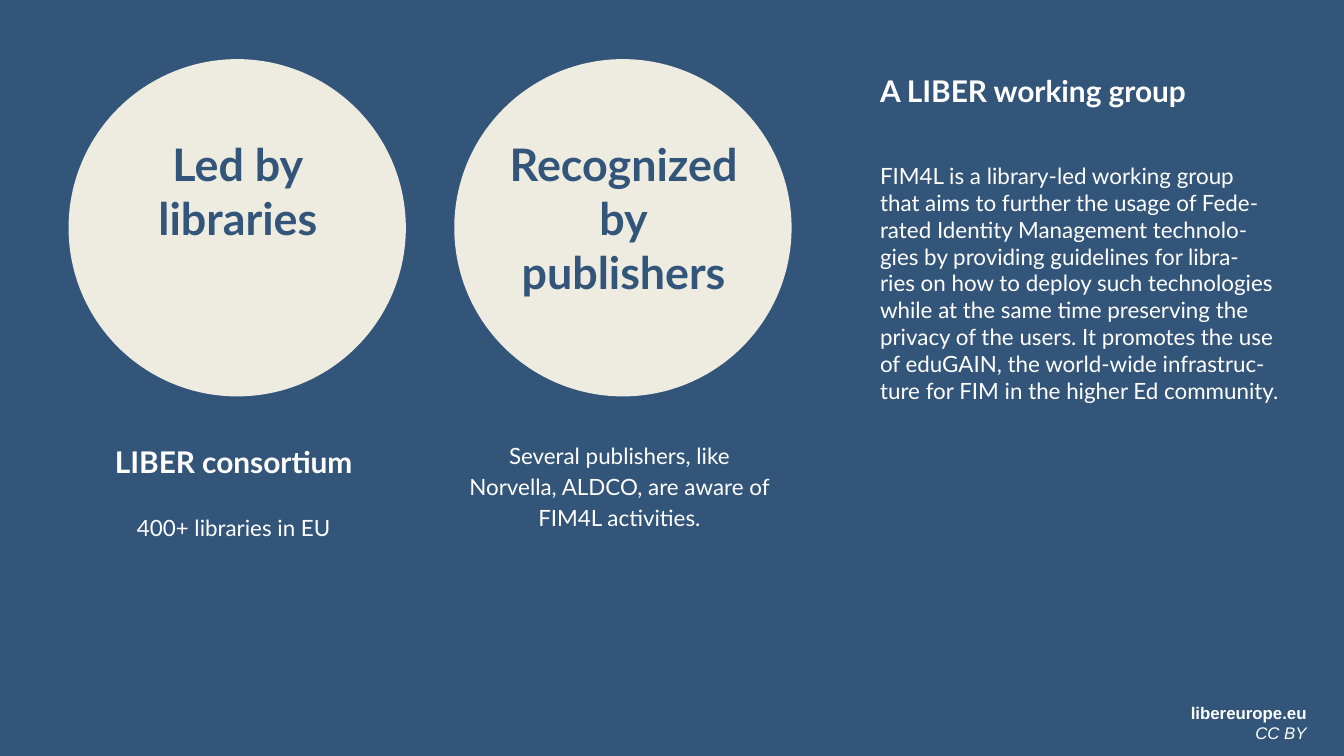
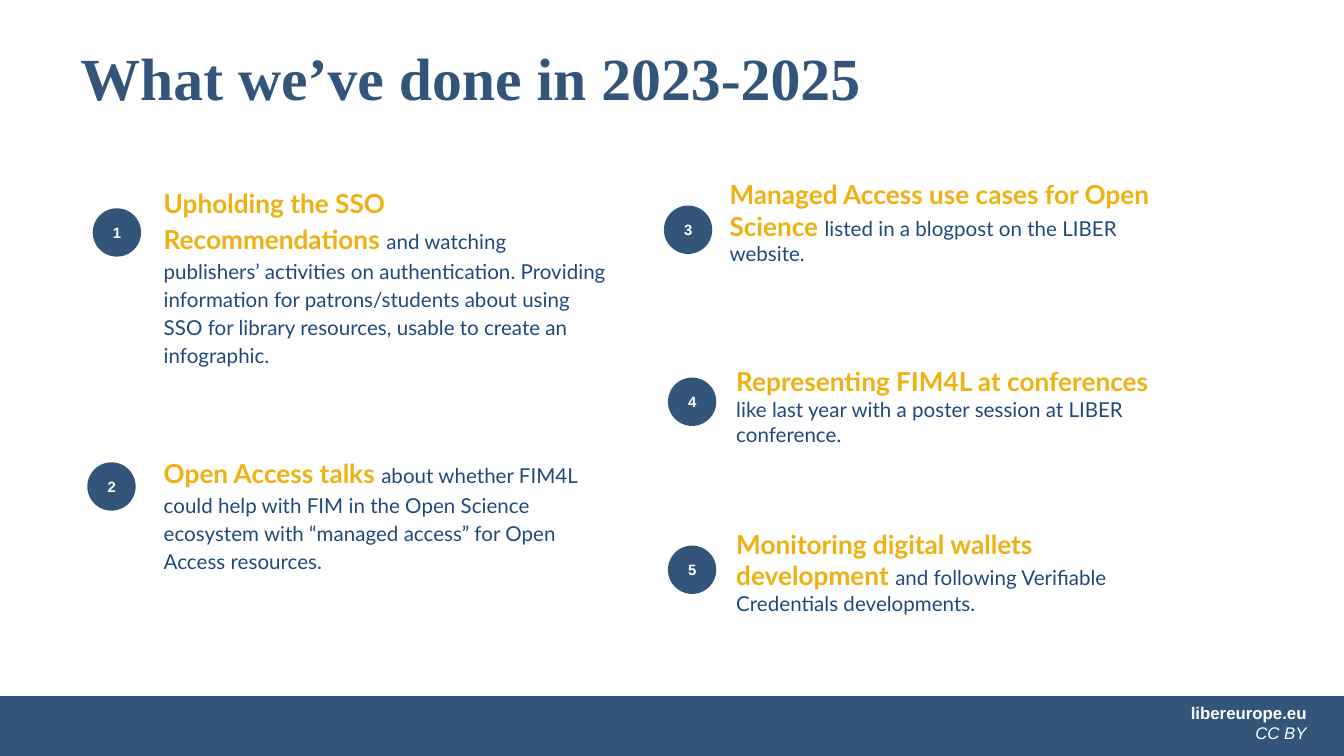
from pptx import Presentation
from pptx.dml.color import RGBColor
from pptx.enum.shapes import MSO_SHAPE
from pptx.enum.text import MSO_ANCHOR, PP_ALIGN
from pptx.util import Inches, Pt

OVAL, RECT = MSO_SHAPE.OVAL, MSO_SHAPE.RECTANGLE
LEFT, CENTER, RIGHT = PP_ALIGN.LEFT, PP_ALIGN.CENTER, PP_ALIGN.RIGHT
TOP, MIDDLE, BOTTOM = MSO_ANCHOR.TOP, MSO_ANCHOR.MIDDLE, MSO_ANCHOR.BOTTOM

COLORS = {
    "blue": "33557A",
    "navy": "1F497D",
    "gold": "EEB111",
    "cream": "EEECE1",
    "white": "FFFFFF",
}


def add_shape(slide, kind, box, color):
    sp = slide.shapes.add_shape(kind, *[Inches(v) for v in box])
    sp.shadow.inherit = False
    sp.fill.solid()
    sp.fill.fore_color.rgb = RGBColor.from_string(COLORS[color])
    sp.line.fill.background()
    return sp


def write(sp, paragraphs, font="Lato", align=LEFT, anchor=TOP, inset=0.1, spacing=None):
    """Fill a shape with paragraphs, each a list of (text, size, color, style) runs."""
    tf = sp.text_frame
    tf.word_wrap = True
    tf.vertical_anchor = anchor
    tf.margin_left = tf.margin_right = Inches(0.1)
    tf.margin_top = tf.margin_bottom = Inches(inset)
    for i, runs in enumerate(paragraphs):
        p = tf.add_paragraph() if i else tf.paragraphs[0]
        p.alignment = align
        if spacing:
            p.line_spacing = spacing
        for text, size, color, style in runs:
            r = p.add_run()
            r.text = text
            r.font.name = font
            r.font.size = Pt(size)
            r.font.bold = "b" in style
            r.font.italic = "i" in style
            r.font.color.rgb = RGBColor.from_string(COLORS[color])
    return tf


prs = Presentation()
prs.slide_width = Inches(10)
prs.slide_height = prs.slide_width * 9 // 16

# Shared background, band and footer
slides = []
for background in ("blue", "white"):
    s = prs.slides.add_slide(prs.slide_layouts[6])
    s.background.fill.solid()
    s.background.fill.fore_color.rgb = RGBColor.from_string(COLORS[background])
    if background == "white":
        add_shape(s, RECT, (0, 5.18, 10, 0.47), "blue")
    sp = s.shapes.add_textbox(Inches(7.91), Inches(5.18), Inches(1.91), Inches(0.4))
    write(sp, [[("libereurope.eu", 9, "white", "b")], [("CC BY", 9, "white", "i")]],
          font="Arial", align=RIGHT, inset=0.05)
    slides.append(s)
about, done = slides

# Slide 1: two circles with captions, and the working group
circles = [
    (0.51, ["Led by", "libraries"],
     [[("LIBER consortium", 16, "white", "b")],
      [("400+ libraries in EU", 12, "white", "")]]),
    (3.38, ["Recognized by", "publishers"],
     [[("Several publishers, like Norvella, ALDCO, are aware of FIM4L activities.",
        12, "white", "")]]),
]
for x, label, caption in circles:
    add_shape(about, OVAL, (x, 0.44, 2.51, 2.51), "cream")
    sp = about.shapes.add_textbox(Inches(x + 0.12), Inches(0.92), Inches(2.28), Inches(1.54))
    write(sp, [[(line, 24, "blue", "b")] for line in label], align=CENTER)
    sp = about.shapes.add_textbox(Inches(x), Inches(3.16), Inches(2.46), Inches(1.77))
    tf = write(sp, caption, align=CENTER, spacing=1.15)
    for p in tf.paragraphs[1:]:
        p.space_before = Pt(16.5)

group_lines = [
    "FIM4L is a library-led working group",
    "that aims to further the usage of Fede-",
    "rated Identity Management technolo-",
    "gies by providing guidelines for libra-",
    "ries on how to deploy such technologies",
    "while at the same time preserving the",
    "privacy of the users. It promotes the use",
    "of eduGAIN, the world-wide infrastruc-",
    "ture for FIM in the higher Ed community.",
]
sp = about.shapes.add_textbox(Inches(6.45), Inches(0.49), Inches(3.17), Inches(2.79))
tf = write(sp, [[("A LIBER working group", 16, "white", "b")]]
           + [[(line, 12, "white", "")] for line in group_lines], inset=0.05)
tf.paragraphs[1].space_before = Pt(28.8)

# Slide 2: title and numbered achievements
sp = done.shapes.add_textbox(Inches(0.5), Inches(0.19), Inches(6.99), Inches(0.75))
write(sp, [[("What we’ve done in 2023-2025", 32, "blue", "b")]],
      font="Times New Roman", anchor=BOTTOM)

# Badge position, text position and height, inset, line spacing, lead, detail
achievements = [
    (0.69, 1.55, 1.12, 1.26, 1.85, 0.1, 1.15, "Upholding the SSO Recommendations ",
     "and watching publishers’ activities on authentication. Providing information for "
     "patrons/students about using SSO for library resources, usable to create an infographic."),
    (0.65, 3.44, 1.12, 3.27, 1.28, 0.1, 1.15, "Open Access talks ",
     "about whether FIM4L could help with FIM in the Open Science ecosystem with "
     "“managed access” for Open Access resources."),
    (4.94, 1.53, 5.33, 1.28, 0.76, 0.05, None, "Managed Access use cases for Open Science ",
     "listed in a blogpost on the LIBER website."),
    (4.97, 2.81, 5.38, 2.67, 0.71, 0.05, None, "Representing FIM4L at conferences ",
     "like last year with a poster session at LIBER conference."),
    (4.97, 4.06, 5.38, 3.88, 0.76, 0.05, None, "Monitoring digital wallets development ",
     "and following Verifiable Credentials developments."),
]
for number, item in enumerate(achievements, 1):
    badge_x, badge_y, x, y, height, inset, spacing, lead, detail = item
    sp = add_shape(done, OVAL, (badge_x, badge_y, 0.36, 0.36), "blue")
    write(sp, [[(str(number), 8, "white", "b")]], font="Arial", align=CENTER, anchor=MIDDLE)
    sp = done.shapes.add_textbox(Inches(x), Inches(y), Inches(3.5), Inches(height))
    write(sp, [[(lead, 14, "gold", "b"), (detail, 11, "navy", "")]],
          inset=inset, spacing=spacing)

prs.save("out.pptx")
